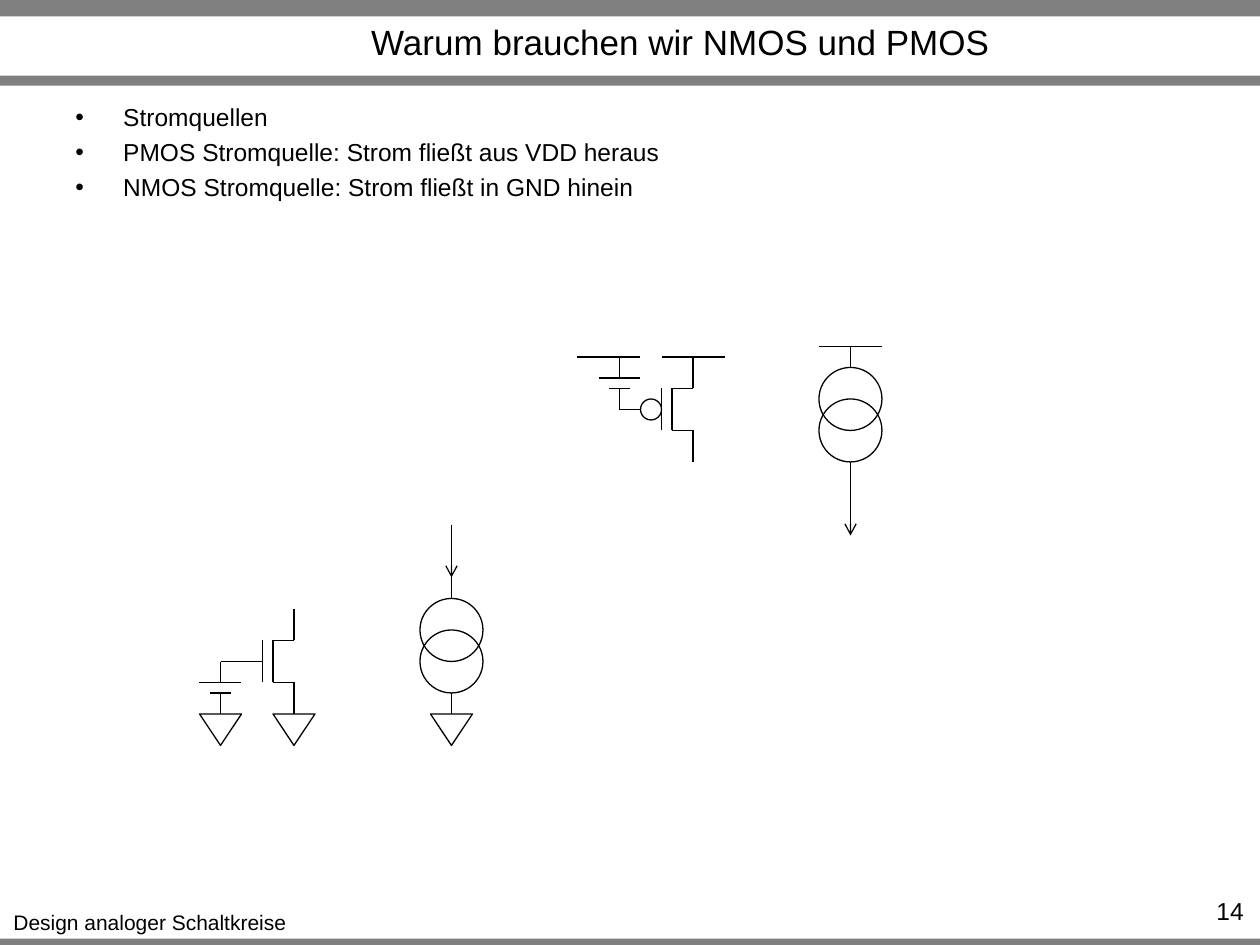
import pptx
import pptx.util
import pptx.dml.color
import pptx.enum.shapes
import pptx.enum.text
import pptx.oxml.ns
import lxml.etree

Inches, Pt = pptx.util.Inches, pptx.util.Pt
Shape = pptx.enum.shapes.MSO_SHAPE
Align, Anchor = pptx.enum.text.PP_ALIGN, pptx.enum.text.MSO_ANCHOR
qn = pptx.oxml.ns.qn

BLACK = pptx.dml.color.RGBColor(0, 0, 0)
WHITE = pptx.dml.color.RGBColor(255, 255, 255)
GREY = pptx.dml.color.RGBColor(128, 128, 128)
FONT = "Arial"
PEN = Pt(0.75)


def grid(steps):
    """The circuit lies on a grid of twelve steps to the inch."""
    return Inches(steps / 12)


# Basic parts
def write(frame, lines, size, align=Align.LEFT, **formats):
    for name, value in {"word_wrap": True, **formats}.items():
        setattr(frame, name, value)
    for index, line in enumerate(lines):
        para = frame.paragraphs[0] if index == 0 else frame.add_paragraph()
        para.alignment = align
        span = para.add_run()
        span.text = line
        for name, value in {"name": FONT, "size": Pt(size), "bold": False}.items():
            setattr(span.font, name, value)
        span.font.color.rgb = BLACK


def add_text(page, box, lines, size, **formats):
    frame = page.shapes.add_textbox(*map(Inches, box)).text_frame
    write(frame, lines, size, **formats)
    return frame


def add_wire(shapes, start, end, arrow=False):
    wire = shapes.add_connector(
        pptx.enum.shapes.MSO_CONNECTOR.STRAIGHT, *map(grid, start + end))
    wire.line.color.rgb = BLACK
    wire.line.width = PEN
    properties = wire._element.spPr
    if arrow:
        line = properties.find(qn("a:ln"))
        lxml.etree.SubElement(line, qn("a:tailEnd"), type="arrow")
    lxml.etree.SubElement(properties, qn("a:effectLst"))


def add_outline(shapes, kind, box, fill=None):
    shape = shapes.add_shape(kind, *map(grid, box))
    shape.shadow.inherit = False
    if fill is None:
        shape.fill.background()
    else:
        shape.fill.solid()
        shape.fill.fore_color.rgb = fill
    shape.line.color.rgb = BLACK
    shape.line.width = PEN
    return shape


# Circuit symbols
def add_transistor(page, left, top):
    """Gate wire starts at left; the drain-source path runs down from top."""
    shapes = page.shapes.add_group_shape().shapes
    gate, channel, drain = left + 4, left + 5, left + 7
    upper, middle, lower, bottom = top + 3, top + 5, top + 7, top + 10
    for start, end in (
        ((left, middle), (gate, middle)),
        ((gate, upper), (gate, lower)),
        ((channel, upper), (channel, lower)),
        ((channel, upper), (drain, upper)),
        ((channel, lower), (drain, lower)),
        ((drain, top), (drain, upper)),
        ((drain, lower), (drain, bottom)),
    ):
        add_wire(shapes, start, end)


def add_battery(page, centre, top):
    for start, end in (
        ((centre, top), (centre, top + 2)),
        ((centre - 2, top + 2), (centre + 2, top + 2)),
        ((centre - 1, top + 3), (centre + 1, top + 3)),
        ((centre, top + 3), (centre, top + 5)),
    ):
        add_wire(page.shapes, start, end)


def add_current_source(page, centre, top):
    for offset in (2, 5):
        add_outline(page.shapes, Shape.OVAL, (centre - 3, top + offset, 6, 6))
    for offset in (0, 11):
        add_wire(page.shapes, (centre, top + offset), (centre, top + offset + 2))


def add_ground(page, centre, top):
    triangle = add_outline(
        page.shapes, Shape.ISOSCELES_TRIANGLE, (centre - 2, top, 4, 3))
    triangle._element.spPr.xfrm.set("flipV", "1")


def add_supply(page, centre, top):
    add_wire(page.shapes, (centre - 3, top), (centre + 3, top))


# Regions
def add_frame(page):
    for top, height in ((7.45, 0.08), (0, 0.13), (0.6, 0.08)):
        bar = page.shapes.add_shape(
            Shape.RECTANGLE, *map(Inches, (0, top, 10, height)))
        bar.shadow.inherit = False
        bar.fill.solid()
        bar.fill.fore_color.rgb = GREY
        bar.line.fill.background()
    add_text(page, (0, 7.17, 2.38, 0.3), ["Design analoger Schaltkreise"], 12,
             align=Align.CENTER, word_wrap=False)
    add_text(page, (9.1, 7.06, 0.87, 0.24), ["14"], 14, align=Align.RIGHT)


def add_title(page, box):
    title = page.shapes.title
    for name, value in zip(("left", "top", "width", "height"), box):
        setattr(title, name, Inches(value))
    write(title.text_frame, ["Warum brauchen wir NMOS und PMOS"], 20,
          align=Align.CENTER, vertical_anchor=Anchor.MIDDLE,
          auto_size=pptx.enum.text.MSO_AUTO_SIZE.NONE)


def add_bullets(page, box, lines):
    frame = add_text(page, box, lines, 14)
    for index, para in enumerate(frame.paragraphs):
        properties = para._p.get_or_add_pPr()
        properties.set("marL", str(Inches(0.38)))
        properties.set("indent", str(-Inches(0.38)))
        lxml.etree.SubElement(properties, qn("a:buFont"), typeface=FONT)
        lxml.etree.SubElement(properties, qn("a:buChar"), char="•")
        if index:
            para.space_before = Pt(3.2)


def add_nmos_source(page, left, top):
    """NMOS transistor and its equivalent source, both down to ground."""
    base, source = top + 18, left + 22
    add_transistor(page, left, top + 8)
    add_battery(page, left, top + 13)
    add_current_source(page, source, top + 5)
    for centre in (left, left + 7, source):
        add_ground(page, centre, base)
    add_wire(page.shapes, (source, top), (source, top + 5), arrow=True)


def add_pmos_source(page, left, top):
    """PMOS transistor and its equivalent source, both up to the supply."""
    source = left + 22
    add_battery(page, left, top + 1)
    add_current_source(page, source, top)
    add_transistor(page, left, top + 1)
    for centre, rail in ((left - 1, top + 1), (left + 7, top + 1), (source, top)):
        add_supply(page, centre, rail)
    add_outline(page.shapes, Shape.OVAL, (left + 2, top + 5, 2, 2), WHITE)
    add_wire(page.shapes, (source, top + 13), (source, top + 18), arrow=True)


def main():
    deck = pptx.Presentation()
    deck.slide_width, deck.slide_height = Inches(10), Inches(7.5)
    page = deck.slides.add_slide(deck.slide_layouts[5])
    add_frame(page)
    add_title(page, (1.3, 0.14, 8.2, 0.38))
    add_bullets(page, (0.5, 0.76, 9, 0.49), [
        "Stromquellen",
        "PMOS Stromquelle: Strom fließt aus VDD heraus",
        "NMOS Stromquelle: Strom fließt in GND hinein",
    ])
    add_nmos_source(page, 21, 50)
    add_pmos_source(page, 59, 33)
    deck.save("out.pptx")


if __name__ == "__main__":
    main()
